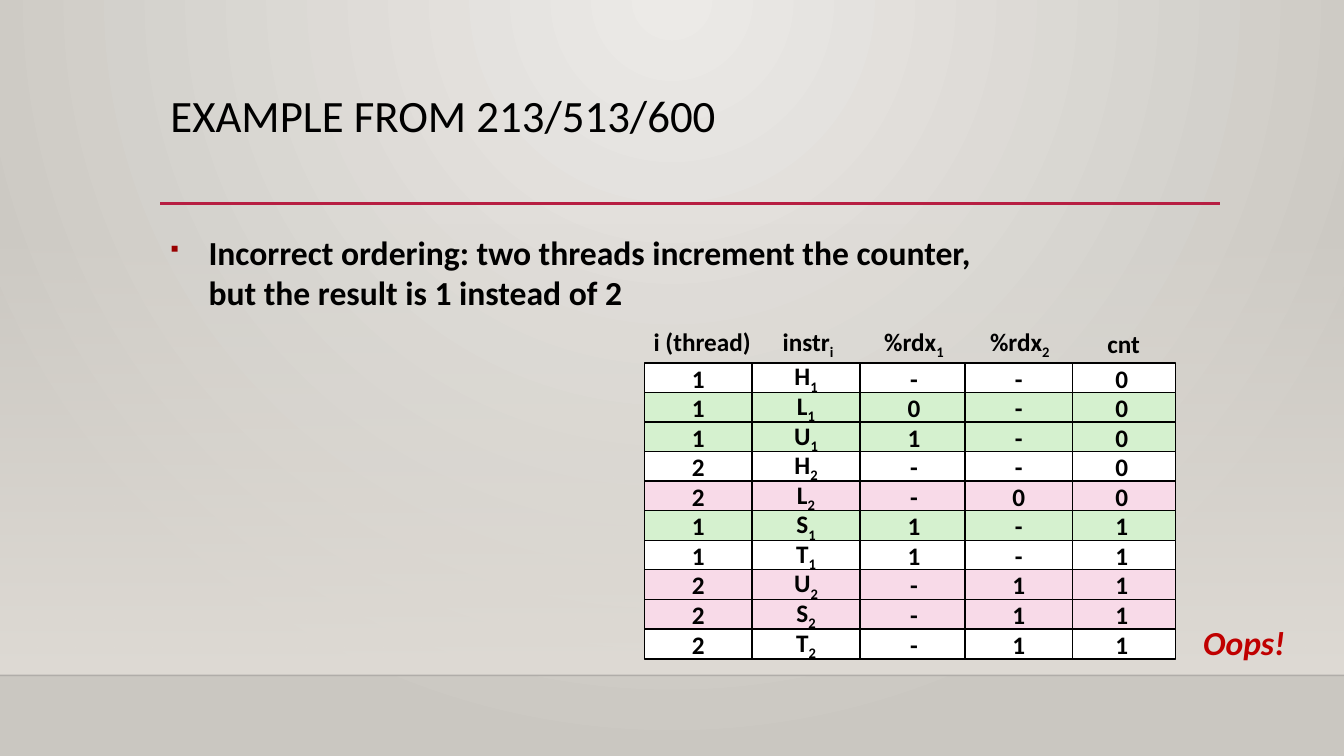
import pptx
import pptx.util
import pptx.dml.color
import pptx.enum.shapes
import pptx.enum.text
import pptx.oxml.ns
from lxml import etree

Inches = pptx.util.Inches
Pt = pptx.util.Pt
qn = pptx.oxml.ns.qn
ALIGN = pptx.enum.text.PP_ALIGN
ANCHOR = pptx.enum.text.MSO_ANCHOR

COLORS = {
    "black": "000000", "white": "FFFFFF", "green": "D5F1CF", "pink": "F8DAE8",
    "accent": "B71E42", "bullet": "990000", "warning": "C00000", "horizon": "000001",
    "center": "ECEAE7", "edge": "CAC7C1", "floor": "DFDBD5",
}
ROW_COLORS = ["white", "green", "green", "white", "pink",
              "green", "white", "pink", "pink", "white"]
THREADS = "1112211222"
COLUMNS = [
    (7.46, [f"{op}_{thread}" for op, thread in zip("HLUHLSTUST", THREADS)]),
    (6.39, THREADS),
    (8.53, "-01--11---"),
    (10.59, "0000011111"),
    (9.57, "----0--111"),
]
HEADERS = [
    ("i (thread)", 6.38, 3.19, 1.17),
    ("instr_i", 7.66, 3.21, 0.71),
    ("%rdx_1", 8.66, 3.21, 0.81),
    ("%rdx_2", 9.71, 3.21, 0.81),
    ("cnt", 10.88, 3.21, 0.53),
]
GRID_TOP = 3.6
ROW_PITCH = 2.64 / 9


def rgb(name):
    return pptx.dml.color.RGBColor.from_string(COLORS[name])


def sub(parent, tag, **attrs):
    return etree.SubElement(parent, qn(tag), attrs)


class SlideBuilder:
    def __init__(self, prs, font):
        self.font = font
        self.s = prs.slides.add_slide(prs.slide_layouts[5])

    def style(self, p, size, color="black", bold=True, italic=False):
        for r in p.runs:
            r.font.name = self.font
            r.font.size = Pt(size)
            r.font.bold = bold
            r.font.italic = italic
            r.font.color.rgb = rgb(color)

    def gradient(self, fill, first, last):
        fill.gradient()
        for stop, color, position in zip(fill.gradient_stops, (first, last), (0, 1)):
            stop.color.rgb = rgb(color)
            stop.position = position

    def background(self):
        self.gradient(self.s.background.fill, "center", "edge")
        grad = self.s.element.find(".//" + qn("a:gradFill"))
        grad.remove(grad.find(qn("a:lin")))
        circle = sub(grad, "a:path", path="circle")
        sub(circle, "a:fillToRect", l="43000", t="0", r="43000", b="100000")

    def rect(self, x, y, w, h):
        sp = self.s.shapes.add_shape(
            pptx.enum.shapes.MSO_SHAPE.RECTANGLE, Inches(x), Inches(y), Inches(w), Inches(h))
        sp.shadow.inherit = False
        return sp

    def fade(self, x, y, w, h):
        sp = self.rect(x, y, w, h)
        sp.line.fill.background()
        self.gradient(sp.fill, "floor", "floor")
        sp.fill.gradient_angle = 270
        sub(sp.element.find(".//" + qn("a:srgbClr")), "a:alpha", val="0")

    def line(self, x1, x2, y, color, width, alpha=100):
        c = self.s.shapes.add_connector(
            pptx.enum.shapes.MSO_CONNECTOR.STRAIGHT, Inches(x1), Inches(y), Inches(x2), Inches(y))
        c.line.color.rgb = rgb(color)
        c.line.width = Pt(width)
        if alpha < 100:
            sub(c.element.find(".//" + qn("a:srgbClr")), "a:alpha", val=str(alpha * 1000))
        sub(c.element.spPr, "a:effectLst")

    def title(self, text, x, y, w, h):
        sp = self.s.shapes.title
        sp.left, sp.top, sp.width, sp.height = Inches(x), Inches(y), Inches(w), Inches(h)
        tf = sp.text_frame
        tf.text = text
        tf.word_wrap = True
        tf.vertical_anchor = ANCHOR.TOP
        p = tf.paragraphs[0]
        p.alignment = ALIGN.LEFT
        p.line_spacing = 0.9
        self.style(p, 32, bold=False)

    def bullet(self, text, x, y, w, h):
        tf = self.s.shapes.add_textbox(Inches(x), Inches(y), Inches(w), Inches(h)).text_frame
        tf.text = text
        tf.word_wrap = True
        p = tf.paragraphs[0]
        pPr = p._p.get_or_add_pPr()
        indent = Inches(0.38)
        pPr.set("marL", str(indent))
        pPr.set("indent", str(-indent))
        sub(sub(pPr, "a:buClr"), "a:srgbClr", val=COLORS["bullet"])
        sub(pPr, "a:buSzPct", val="60000")
        sub(pPr, "a:buFont", typeface="Wingdings", charset="2")
        sub(pPr, "a:buChar", char="§")
        self.style(p, 24)

    def centered(self, tf, text, size, **style):
        tf.vertical_anchor = ANCHOR.MIDDLE
        p = tf.paragraphs[0]
        p.alignment = ALIGN.CENTER
        base, _, subscript = text.partition("_")
        p.text = base
        if subscript:
            r = p.add_run()
            r.text = subscript
            r.font._element.set("baseline", "-25000")
        self.style(p, size, **style)

    def label(self, text, x, y, w, h, size, **style):
        tf = self.s.shapes.add_textbox(Inches(x), Inches(y), Inches(w), Inches(h)).text_frame
        tf.word_wrap = False
        tf.auto_size = pptx.enum.text.MSO_AUTO_SIZE.SHAPE_TO_FIT_TEXT
        self.centered(tf, text, size, **style)

    def cell(self, text, x, y, color):
        sp = self.rect(x, y, 1.07, 0.3)
        sp.fill.solid()
        sp.fill.fore_color.rgb = rgb(color)
        sp.line.color.rgb = rgb("black")
        sp.line.width = Pt(1)
        self.centered(sp.text_frame, text, 18)


def main():
    prs = pptx.Presentation()
    prs.slide_width = Inches(13.33)
    prs.slide_height = Inches(7.5)
    b = SlideBuilder(prs, "Calibri")
    b.background()
    b.fade(0, 2.21, 13.33, 4.49)
    b.line(0, 13.33, 6.7, "horizon", 1, alpha=20)
    b.line(1.59, 12.1, 2.02, "accent", 2.5)
    b.title("EXAMPLE FROM 213/513/600", 1.59, 0.88, 10.5, 1.15)
    b.bullet("Incorrect ordering: two threads increment the counter, "
             "but the result is 1 instead of 2", 1.59, 2.25, 8.64, 0.94)
    for x, values in COLUMNS:
        for i, (value, color) in enumerate(zip(values, ROW_COLORS)):
            b.cell(value, x, GRID_TOP + i * ROW_PITCH, color)
    for text, x, y, w in HEADERS:
        b.label(text, x, y, w, 0.4, 18)
    b.label("Oops!", 11.83, 6.12, 1.02, 0.5, 24, color="warning", italic=True)
    prs.save("out.pptx")


if __name__ == "__main__":
    main()
